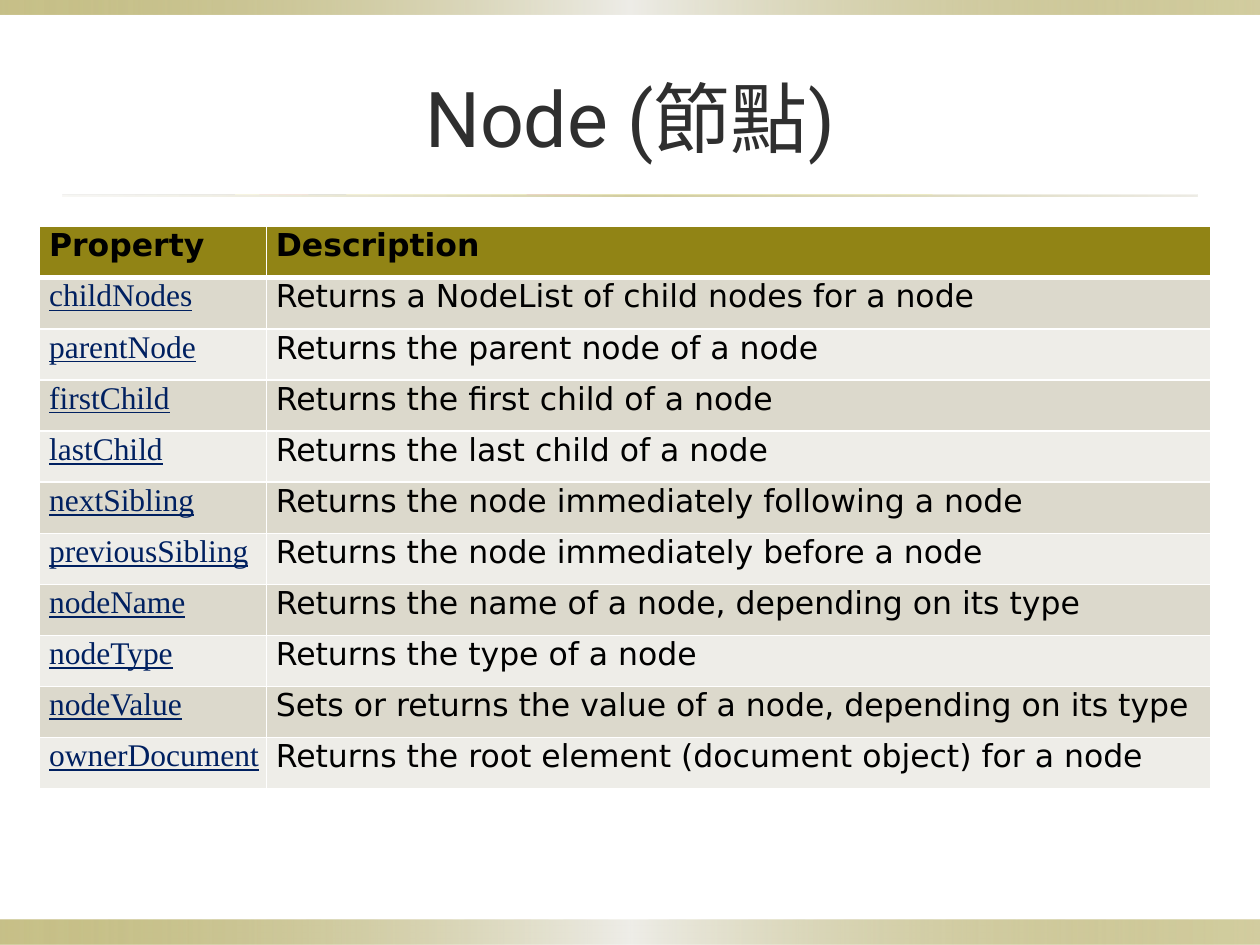
from dataclasses import dataclass

from lxml.etree import SubElement
from pptx import Presentation
from pptx.dml.color import RGBColor as Color
from pptx.enum.shapes import MSO_SHAPE as Shape
from pptx.enum.text import MSO_ANCHOR as Anchor, PP_ALIGN as Align
from pptx.oxml.ns import qn
from pptx.util import Cm, Pt


@dataclass(frozen=True)
class Theme:
    olive: str = "918415"
    sand: str = "DCD9CC"
    pale: str = "EEEDE8"
    white: str = "FFFFFF"
    title: str = "2F2F2F"
    text: str = "000000"
    link: str = "002060"
    title_size: int = 44
    table_size: int = 18
    title_font: str = "Roboto"
    text_font: str = "DejaVu Sans"
    link_font: str = "Times New Roman"


theme = Theme()


def add_color(parent, value, alpha=100):
    color = SubElement(parent, qn("a:srgbClr"), val=value)
    if alpha < 100:
        SubElement(color, qn("a:alpha"), val=str(alpha * 1000))


def set_font(para, size, name, color, **formats):
    font = para.runs[0].font
    for key, value in dict(size=Pt(size), name=name, **formats).items():
        setattr(font, key, value)
    font.color.rgb = Color.from_string(color)


deck = Presentation()
deck.slide_width, deck.slide_height = Cm(25.4), Cm(19.05)
page = deck.slides.add_slide(deck.slide_layouts[5])
title = page.shapes.title

band_stops = [(0, theme.olive, 50), (50, theme.pale, 100), (100, theme.olive, 40)]
rule_stops = [(0, theme.sand, 20), (50, theme.olive, 40), (100, theme.sand, 50)]
bars = [
    (0, 18.55, 25.4, 0.5, band_stops),
    (0, 0, 25.4, 0.3, band_stops),
    (1.27, 3.92, 22.86, 0.04, rule_stops),
]
for left, top, width, height, stops in bars:
    bar = page.shapes.add_shape(Shape.RECTANGLE, Cm(left), Cm(top), Cm(width), Cm(height))
    title._element.addprevious(bar._element)
    bar.shadow.inherit = False
    bar.line.fill.background()
    bar.fill.gradient()
    bar.fill.gradient_angle = 0
    stop_list = bar._element.spPr.find(".//" + qn("a:gsLst"))
    for old_stop in list(stop_list):
        stop_list.remove(old_stop)
    for position, color, alpha in stops:
        stop = SubElement(stop_list, qn("a:gs"), pos=str(position * 1000))
        add_color(stop, color, alpha)

title.left, title.top, title.width, title.height = Cm(1.27), Cm(0.76), Cm(22.86), Cm(3.18)
title.text_frame.text = "Node (節點)"
title.text_frame.vertical_anchor = Anchor.MIDDLE
heading = title.text_frame.paragraphs[0]
heading.alignment = Align.CENTER
set_font(heading, theme.title_size, theme.title_font, theme.title)

rows = [
    ("Property", "Description"),
    ("childNodes", "Returns a NodeList of child nodes for a node"),
    ("parentNode", "Returns the parent node of a node"),
    ("firstChild", "Returns the first child of a node"),
    ("lastChild", "Returns the last child of a node"),
    ("nextSibling", "Returns the node immediately following a node"),
    ("previousSibling", "Returns the node immediately before a node"),
    ("nodeName", "Returns the name of a node, depending on its type"),
    ("nodeType", "Returns the type of a node"),
    ("nodeValue", "Sets or returns the value of a node, depending on its type"),
    ("ownerDocument", "Returns the root element (document object) for a node"),
]
column_widths = [4.57, 19.04]
row_height = 1.03
frame = page.shapes.add_table(
    len(rows), len(column_widths), Cm(0.8), Cm(4.57),
    Cm(sum(column_widths)), Cm(row_height * len(rows)),
)
table = frame.table
for column, width in zip(table.columns, column_widths):
    column.width = Cm(width)

cell_margins = dict(margin_left=Cm(0.19), margin_top=Cm(0.02), margin_right=Cm(0.02), margin_bottom=0)
for row_index, texts in enumerate(rows):
    table.rows[row_index].height = Cm(row_height)
    is_header = row_index == 0
    fill = theme.olive if is_header else (theme.pale, theme.sand)[row_index % 2]
    for column_index, text in enumerate(texts):
        cell = table.cell(row_index, column_index)
        for key, value in cell_margins.items():
            setattr(cell, key, value)
        for side in ("L", "R", "T", "B"):
            thick = (is_header and side == "B") or (row_index == 1 and side == "T")
            border = SubElement(
                cell._tc.get_or_add_tcPr(), qn(f"a:ln{side}"), w=str(Pt(3 if thick else 1))
            )
            add_color(SubElement(border, qn("a:solidFill")), theme.white)
        cell.fill.solid()
        cell.fill.fore_color.rgb = Color.from_string(fill)
        cell.text = text
        is_link = column_index == 0 and not is_header
        set_font(
            cell.text_frame.paragraphs[0],
            theme.table_size,
            theme.link_font if is_link else theme.text_font,
            theme.link if is_link else theme.text,
            bold=is_header,
            underline=is_link,
        )

deck.save("out.pptx")
